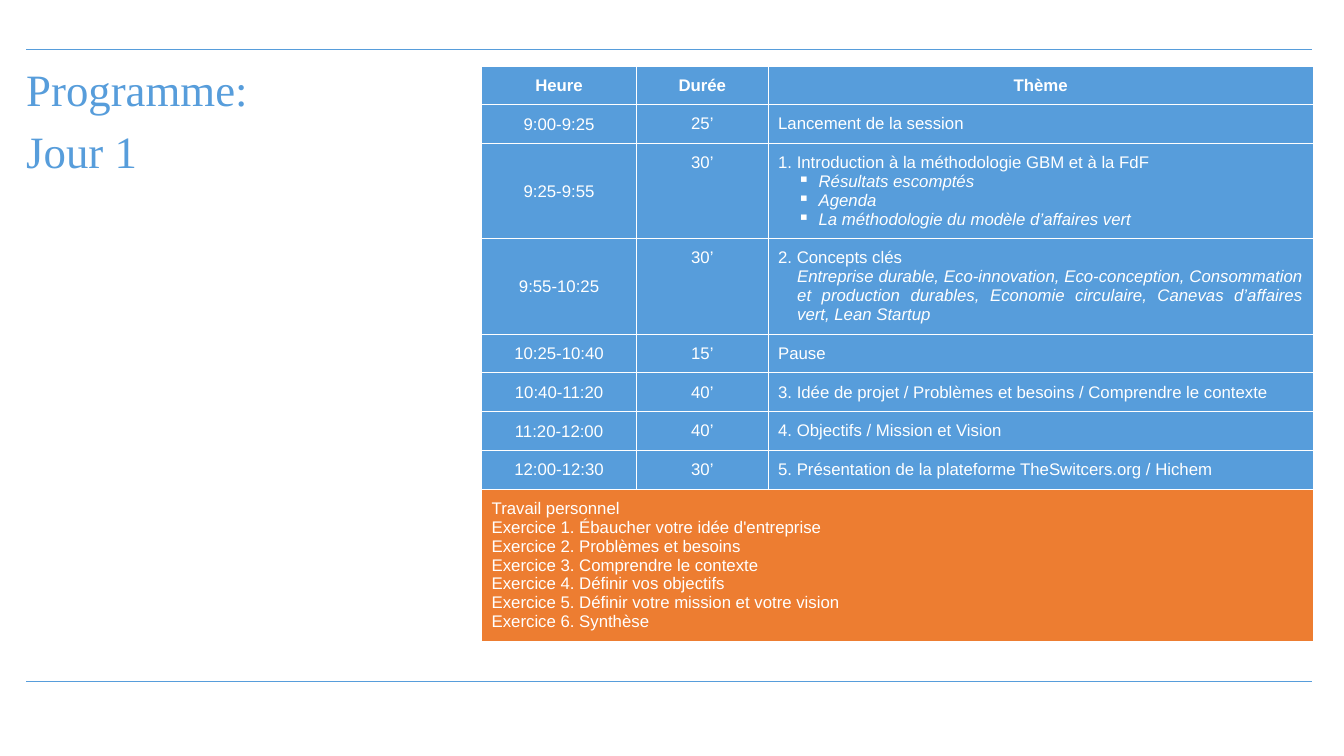
import pptx
import pptx.util
import pptx.dml.color
import pptx.enum.shapes
import pptx.enum.text
import pptx.oxml
import pptx.oxml.ns
import lxml.etree

Cm = pptx.util.Cm
Pt = pptx.util.Pt
ALIGN = pptx.enum.text.PP_ALIGN
ANCHOR = pptx.enum.text.MSO_ANCHOR
NS = pptx.oxml.ns.nsdecls("a")
BLUE, ORANGE, WHITE = "579DDB", "ED7D31", "FFFFFF"


def rgb(value):
    return pptx.dml.color.RGBColor.from_string(value)


def fill_cell(cell, paragraphs, color, align, anchor, bold=False):
    tcPr = cell._tc.get_or_add_tcPr()
    for side in ("lnL", "lnR", "lnT", "lnB"):
        tcPr.append(pptx.oxml.parse_xml(
            f'<a:{side} {NS} w="6350"><a:solidFill><a:srgbClr val="{WHITE}"/></a:solidFill></a:{side}>'))
    cell.fill.solid()
    cell.fill.fore_color.rgb = rgb(color)
    cell.vertical_anchor = anchor
    cell.margin_left = cell.margin_right = Cm(0.25)
    cell.margin_top = cell.margin_bottom = Cm(0.25)
    tf = cell.text_frame
    for i, (style, text) in enumerate(paragraphs):
        p = tf.paragraphs[0] if i == 0 else tf.add_paragraph()
        p.alignment = align
        pPr = p._p.get_or_add_pPr()
        if style == "bullet":
            pPr.set("marL", str(Cm(1.02)))
            pPr.set("indent", str(-Cm(0.53)))
            pPr.append(pptx.oxml.parse_xml(f'<a:buChar {NS} char="▪"/>'))
        elif style == "indent":
            pPr.set("marL", str(Cm(0.48)))
        r = p.add_run()
        r.text = text
        r.font.name = "Arial"
        r.font.size = Pt(12)
        r.font.bold = bold
        r.font.italic = style != "plain"
        r.font.color.rgb = rgb(WHITE)


prs = pptx.Presentation()
prs.slide_width = Cm(33.87)
prs.slide_height = Cm(19.05)
s = prs.slides.add_slide(prs.slide_layouts[5])

for y in (1.25, 17.17):
    rule = s.shapes.add_connector(
        pptx.enum.shapes.MSO_CONNECTOR.STRAIGHT, Cm(0.66), Cm(y), Cm(33.07), Cm(y))
    rule.line.color.rgb = rgb(BLUE)
    rule.line.width = Pt(1)
    lxml.etree.SubElement(rule._element.spPr, pptx.oxml.ns.qn("a:effectLst"))

title = s.shapes.title
title.left, title.top, title.width, title.height = Cm(0.66), Cm(1.7), Cm(11.25), Cm(1.04)
tf = title.text_frame
tf.word_wrap = True
tf.auto_size = pptx.enum.text.MSO_AUTO_SIZE.NONE
tf.vertical_anchor = ANCHOR.TOP
tf.margin_left = tf.margin_right = tf.margin_top = tf.margin_bottom = 0
for i, text in enumerate(("Programme:", "Jour 1")):
    p = tf.paragraphs[0] if i == 0 else tf.add_paragraph()
    p.alignment = ALIGN.LEFT
    p.line_spacing = 0.9
    p.space_before = Pt(10 if i else 0)
    r = p.add_run()
    r.text = text
    r.font.name = "Times New Roman"
    r.font.size = Pt(32)
    r.font.color.rgb = rgb(BLUE)

sessions = [
    ("9:00-9:25", "25’", [("plain", "Lancement de la session")]),
    ("9:25-9:55", "30’", [
        ("plain", "1. Introduction à la méthodologie GBM et à la FdF"),
        ("bullet", "Résultats escomptés"),
        ("bullet", "Agenda"),
        ("bullet", "La méthodologie du modèle d’affaires vert")]),
    ("9:55-10:25", "30’", [
        ("plain", "2. Concepts clés"),
        ("indent", "Entreprise durable, Eco-innovation, Eco-conception, Consommation et production "
                   "durables, Economie circulaire, Canevas d’affaires vert, Lean Startup")]),
    ("10:25-10:40", "15’", [("plain", "Pause")]),
    ("10:40-11:20", "40’", [
        ("plain", "3. Idée de projet / Problèmes et besoins / Comprendre le contexte")]),
    ("11:20-12:00", "40’", [("plain", "4. Objectifs / Mission et Vision")]),
    ("12:00-12:30", "30’", [
        ("plain", "5. Présentation de la plateforme TheSwitcers.org / Hichem")]),
]
exercises = [
    "Travail personnel",
    "Exercice 1. Ébaucher votre idée d'entreprise",
    "Exercice 2. Problèmes et besoins",
    "Exercice 3. Comprendre le contexte",
    "Exercice 4. Définir vos objectifs",
    "Exercice 5. Définir votre mission et votre vision",
    "Exercice 6. Synthèse",
]

widths = [3.9, 3.32, 13.73]
heights = [0.98, 0.98, 2.39, 2.39, 0.98, 0.98, 0.98, 0.98, 3.8]
table = s.shapes.add_table(
    len(heights), len(widths), Cm(12.14), Cm(1.66), Cm(sum(widths)), Cm(sum(heights))).table
table.horz_banding = False
for column, width in zip(table.columns, widths):
    column.width = Cm(width)
for row, height in zip(table.rows, heights):
    row.height = Cm(height)

for j, heading in enumerate(("Heure", "Durée", "Thème")):
    fill_cell(table.cell(0, j), [("plain", heading)], BLUE, ALIGN.CENTER, ANCHOR.TOP, bold=True)

for i, (time, duration, theme) in enumerate(sessions, start=1):
    fill_cell(table.cell(i, 0), [("plain", time)], BLUE, ALIGN.CENTER, ANCHOR.MIDDLE)
    fill_cell(table.cell(i, 1), [("plain", duration)], BLUE, ALIGN.CENTER, ANCHOR.TOP)
    fill_cell(table.cell(i, 2), theme, BLUE, ALIGN.JUSTIFY, ANCHOR.TOP)

homework = table.cell(len(heights) - 1, 0)
homework.merge(table.cell(len(heights) - 1, len(widths) - 1))
fill_cell(homework, [("plain", text) for text in exercises], ORANGE, ALIGN.LEFT, ANCHOR.TOP)

prs.save("out.pptx")
